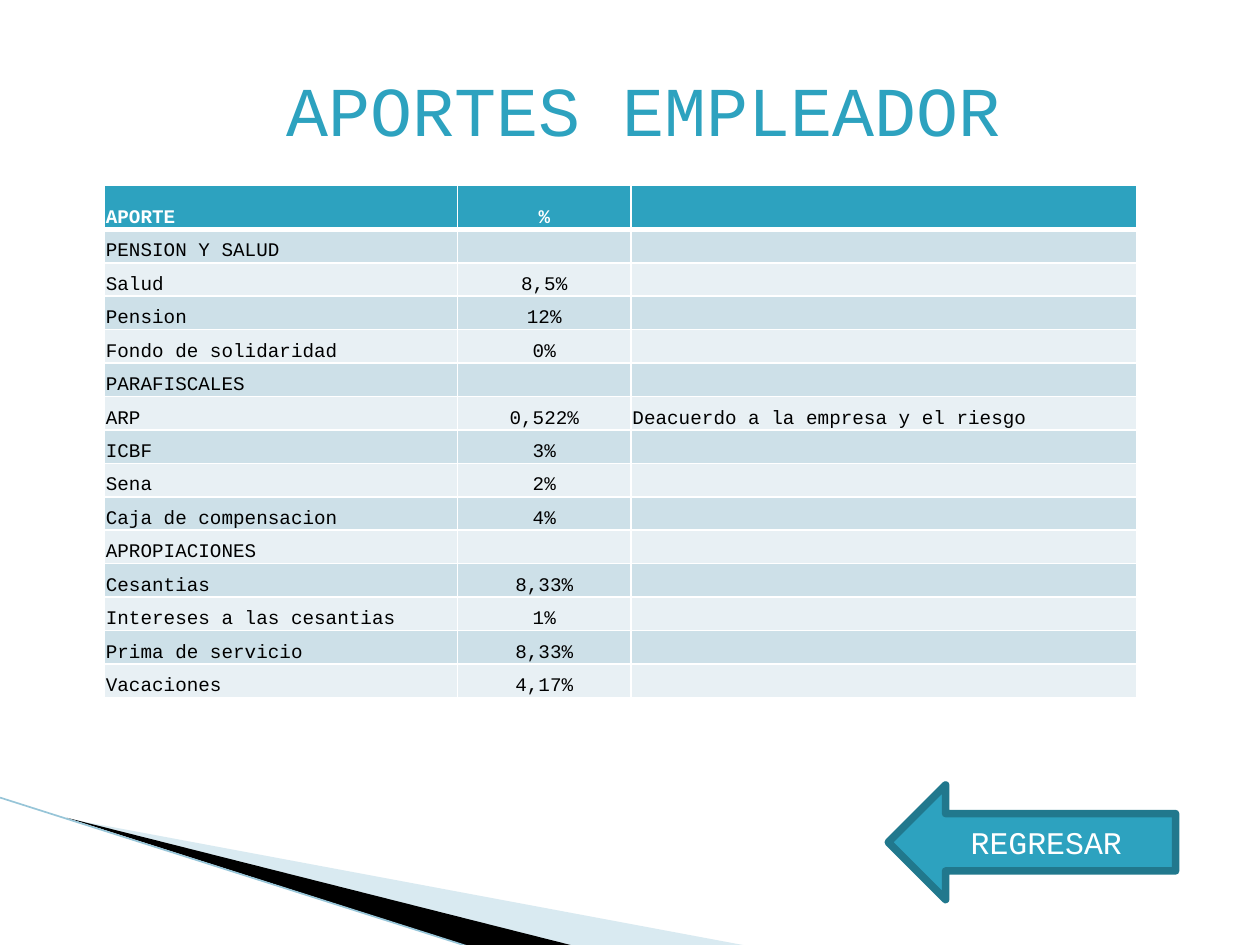
from lxml import etree
from pptx import Presentation
from pptx.dml.color import RGBColor
from pptx.enum.shapes import MSO_CONNECTOR, MSO_SHAPE
from pptx.enum.text import MSO_ANCHOR, PP_ALIGN
from pptx.oxml.ns import qn
from pptx.util import Inches, Pt

LEFT, CENTER = PP_ALIGN.LEFT, PP_ALIGN.CENTER
MIDDLE, BOTTOM = MSO_ANCHOR.MIDDLE, MSO_ANCHOR.BOTTOM
LEFT_ARROW = MSO_SHAPE.LEFT_ARROW
STRAIGHT = MSO_CONNECTOR.STRAIGHT

FONT = "Courier New"
COLORS = {
    "accent": "2DA2BF",
    "arrow_border": "21788D",
    "band_dark": "CDE0E8",
    "band_light": "E8F0F4",
    "wedge": "A0CBDC",
    "edge": "97C5D8",
    "black": "000000",
    "white": "FFFFFF",
}

CONTRIBUTIONS = [
    ("APORTE", "%", ""),
    ("PENSION Y SALUD", "", ""),
    ("Salud", "8,5%", ""),
    ("Pension", "12%", ""),
    ("Fondo de solidaridad", "0%", ""),
    ("PARAFISCALES", "", ""),
    ("ARP", "0,522%", "Deacuerdo a la empresa y el riesgo"),
    ("ICBF", "3%", ""),
    ("Sena", "2%", ""),
    ("Caja de compensacion", "4%", ""),
    ("APROPIACIONES", "", ""),
    ("Cesantias", "8,33%", ""),
    ("Intereses a las cesantias", "1%", ""),
    ("Prima de servicio", "8,33%", ""),
    ("Vacaciones", "4,17%", ""),
]
COLUMN_WIDTHS = [2.8, 1.38, 4.01]
COLUMN_ALIGNMENTS = [LEFT, CENTER, LEFT]
TABLE_HEIGHT, HEADER_HEIGHT = 4.07, 0.35


def color(name):
    return RGBColor.from_string(COLORS[name])


class SlideBuilder:
    def __init__(self, slide):
        self.slide = slide

    def set_text(self, text_frame, text, size, color_name, alignment, bold=False):
        text_frame.text = text
        paragraph = text_frame.paragraphs[0]
        paragraph.alignment = alignment
        for run in paragraph.runs:
            run.font.name = FONT
            run.font.size = Pt(size)
            run.font.bold = bold
            run.font.color.rgb = color(color_name)

    def title(self, text, left, top, width, height):
        title = self.slide.shapes.title
        title.left, title.top = Inches(left), Inches(top)
        title.width, title.height = Inches(width), Inches(height)
        title.text_frame.word_wrap = False
        title.text_frame.vertical_anchor = MIDDLE
        self.set_text(title.text_frame, text, 40, "accent", CENTER)

    def wedge(self, points, color_name, opacity=100):
        start, *rest = [(Inches(x), Inches(y)) for x, y in points]
        builder = self.slide.shapes.build_freeform(*start)
        builder.add_line_segments(rest)
        shape = builder.convert_to_shape()
        shape.shadow.inherit = False
        shape.fill.solid()
        shape.fill.fore_color.rgb = color(color_name)
        shape.line.fill.background()
        if opacity < 100:
            fill_color = shape._element.spPr.find(qn("a:solidFill"))[0]
            etree.SubElement(fill_color, qn("a:alpha"), val=str(opacity * 1000))

    def line(self, start, end, color_name, width):
        points = [Inches(value) for value in (*start, *end)]
        connector = self.slide.shapes.add_connector(STRAIGHT, *points)
        connector.line.color.rgb = color(color_name)
        connector.line.width = Pt(width)
        etree.SubElement(connector._element.spPr, qn("a:effectLst"))

    def cell_borders(self, cell, bottom_width):
        properties = cell._tc.get_or_add_tcPr()
        for side, width in (("L", 1), ("R", 1), ("T", 1), ("B", bottom_width)):
            border = etree.SubElement(properties, qn(f"a:ln{side}"), w=str(Pt(width)))
            fill = etree.SubElement(border, qn("a:solidFill"))
            etree.SubElement(fill, qn("a:srgbClr"), val=COLORS["white"])

    def cell(self, cell, text, alignment, fill_name, is_header):
        cell.margin_left = cell.margin_right = cell.margin_top = Inches(0.01)
        cell.margin_bottom = 0
        cell.vertical_anchor = BOTTOM
        self.cell_borders(cell, 3 if is_header else 1)
        cell.fill.solid()
        cell.fill.fore_color.rgb = color(fill_name)
        text_color = "white" if is_header else "black"
        self.set_text(cell.text_frame, text, 11, text_color, alignment, is_header)
        if not text:
            # The end mark keeps an empty cell from stretching its row.
            paragraph = cell.text_frame.paragraphs[0]
            etree.SubElement(paragraph._p, qn("a:endParaRPr"), sz="1100")

    def table(self, rows, left, top):
        frame = self.slide.shapes.add_table(
            len(rows), len(COLUMN_WIDTHS), Inches(left), Inches(top),
            Inches(sum(COLUMN_WIDTHS)), Inches(TABLE_HEIGHT))
        table = frame.table
        for column, width in zip(table.columns, COLUMN_WIDTHS):
            column.width = Inches(width)
        body_height = (TABLE_HEIGHT - HEADER_HEIGHT) / (len(rows) - 1)
        for index, texts in enumerate(rows):
            is_header = index == 0
            table.rows[index].height = Inches(HEADER_HEIGHT if is_header else body_height)
            band = "band_dark" if index % 2 else "band_light"
            fill_name = "accent" if is_header else band
            for column, text in enumerate(texts):
                self.cell(table.cell(index, column), text,
                          COLUMN_ALIGNMENTS[column], fill_name, is_header)

    def back_arrow(self, text, left, top, width, height):
        shape = self.slide.shapes.add_shape(
            LEFT_ARROW, Inches(left), Inches(top), Inches(width), Inches(height))
        shape.shadow.inherit = False
        shape.fill.solid()
        shape.fill.fore_color.rgb = color("accent")
        shape.line.color.rgb = color("arrow_border")
        shape.line.width = Pt(4.33)
        shape.text_frame.word_wrap = True
        shape.text_frame.vertical_anchor = MIDDLE
        self.set_text(shape.text_frame, text, 18, "white", CENTER)


def main():
    presentation = Presentation()
    presentation.slide_width, presentation.slide_height = Inches(10), Inches(7.5)
    title_only = presentation.slide_layouts[5]
    builder = SlideBuilder(presentation.slides.add_slide(title_only))

    builder.wedge([(0.55, 6.5), (5.95, 7.51), (4.56, 7.51)], "wedge", opacity=40)
    builder.wedge([(0.53, 6.49), (4.57, 7.51), (3.72, 7.51)], "black")
    builder.line((0, 6.33), (3.71, 7.51), "edge", 0.95)
    builder.title("APORTES EMPLEADOR", 2.04, 0.48, 6.13, 0.77)
    builder.table(CONTRIBUTIONS, 0.83, 1.47)
    builder.back_arrow("REGRESAR", 7.05, 6.23, 2.28, 0.91)

    presentation.save("out.pptx")


if __name__ == "__main__":
    main()
